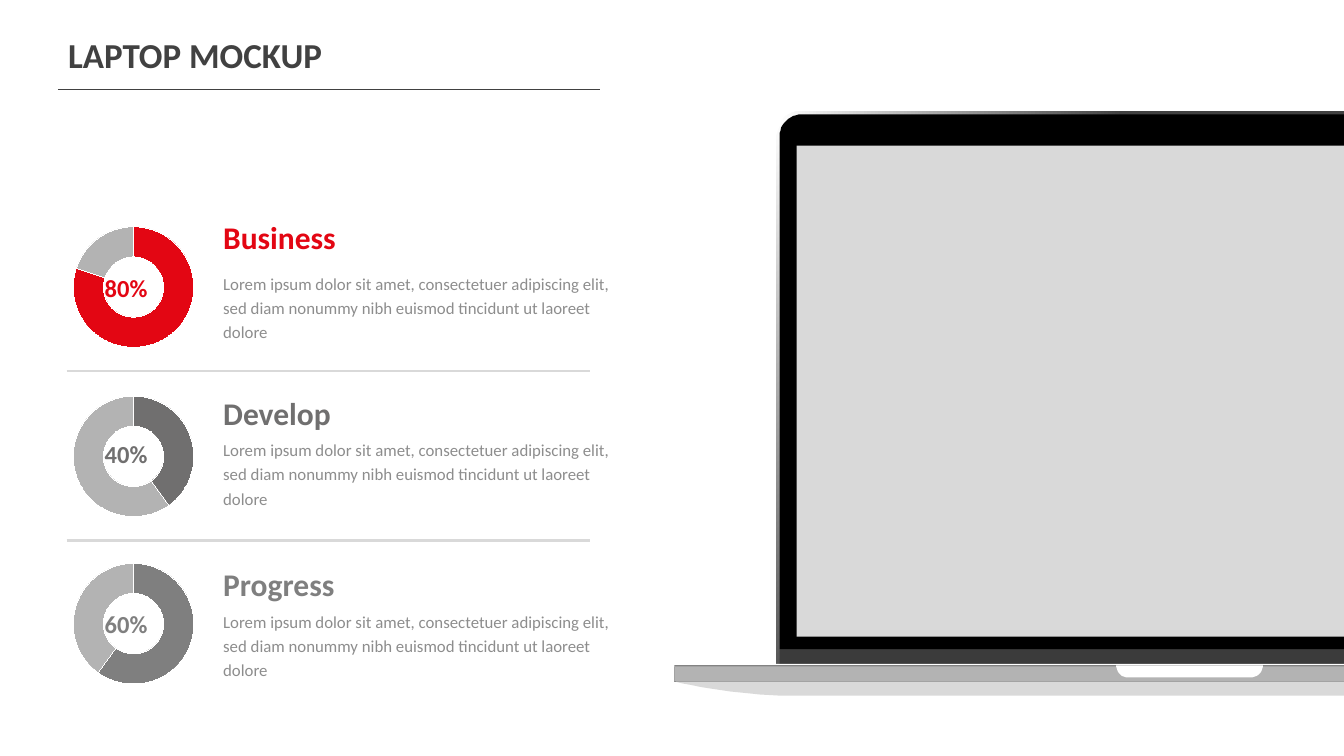
from lxml import etree
from pptx import Presentation
from pptx.chart.data import CategoryChartData
from pptx.dml.color import RGBColor
from pptx.enum.chart import XL_CHART_TYPE
from pptx.enum.shapes import MSO_CONNECTOR, MSO_SHAPE
from pptx.enum.text import MSO_ANCHOR, MSO_AUTO_SIZE, PP_ALIGN
from pptx.oxml import parse_xml
from pptx.oxml.ns import nsdecls, qn
from pptx.util import Pt

DOUGHNUT = XL_CHART_TYPE.DOUGHNUT
STRAIGHT = MSO_CONNECTOR.STRAIGHT
RECT = MSO_SHAPE.RECTANGLE
LEFT = PP_ALIGN.LEFT
TOP = MSO_ANCHOR.TOP
NO_FIT = MSO_AUTO_SIZE.NONE

PX = 9144  # 100 px to the inch
WIDTH, HEIGHT = 2667, 1500
FONT = "Calibri"
RED, DARK, MID, GRAY = "E30613", "414141", "706F6F", "7F7F7F"
SILVER, LIGHT, WHITE, BLACK = "B3B3B3", "D9D9D9", "FFFFFF", "000000"
BODY_COLOR = "8D8D8D"
LOREM = ("Lorem ipsum dolor sit amet, consectetuer adipiscing elit, "
         "sed diam nonummy nibh euismod tincidunt ut laoreet dolore")

# heading, percent, colour, then tops of chart, heading, body and percent
ROWS = [
    ("Business", 80, RED, 435, 428, 530, 536),
    ("Develop", 40, MID, 771, 777, 860, 867),
    ("Progress", 60, GRAY, 1103, 1116, 1200, 1203),
]


def px(*values):
    return [v * PX for v in values]


def rgb(color):
    return RGBColor.from_string(color)


def write(sp, text, size, color, bold=False, spacing=None):
    tf = sp.text_frame
    tf.word_wrap = True
    tf.auto_size = NO_FIT
    tf.vertical_anchor = TOP
    p = tf.paragraphs[0]
    p.alignment = LEFT
    if spacing:
        p.line_spacing = spacing
    r = p.add_run()
    r.text = text
    r.font.name = FONT
    r.font.size = Pt(size)
    r.font.bold = bold
    r.font.color.rgb = rgb(color)


def add_title(slide, text):
    sp = slide.shapes.title
    sp.left, sp.top, sp.width, sp.height = px(125, 45, 1276, 100)
    write(sp, text, 50, DARK, bold=True, spacing=1.2)


def add_text(slide, box, text, size, color, **style):
    write(slide.shapes.add_textbox(*px(*box)), text, size, color, **style)


def add_rule(slide, x1, x2, y, color, weight):
    line = slide.shapes.add_connector(STRAIGHT, *px(x1, y, x2, y))
    line.line.color.rgb = rgb(color)
    line.line.width = Pt(weight)
    etree.SubElement(line._element.spPr, qn("a:effectLst"))


def add_doughnut(slide, box, percent, color):
    data = CategoryChartData()
    data.categories = ["1", "2"]
    data.add_series("Series 1", (percent, 100 - percent))
    chart = slide.shapes.add_chart(DOUGHNUT, *px(*box), data).chart
    chart.has_legend = False
    chart.has_title = False
    chart.font.name = FONT
    chart.font.size = Pt(10)
    chart.font.color.rgb = rgb(MID)
    plot = chart.plots[0]
    plot.vary_by_categories = True
    for i, fill in enumerate((color, SILVER)):
        fmt = plot.series[0].points[i].format
        fmt.fill.solid()
        fmt.fill.fore_color.rgb = rgb(fill)
        fmt.line.color.rgb = rgb(WHITE)
    plot._element.find(qn("c:holeSize")).set("val", "70")
    area = chart._chartSpace.chart.plotArea
    for old in area.findall(qn("c:layout")):
        area.remove(old)
    area.insert(0, parse_xml(
        f'<c:layout {nsdecls("c")}><c:manualLayout><c:layoutTarget val="inner"/>'
        '<c:xMode val="edge"/><c:yMode val="edge"/><c:x val="0.05"/><c:y val="0.05"/>'
        '<c:w val="0.9"/><c:h val="0.9"/></c:manualLayout></c:layout>'))


def paint(sp, color):
    sp.shadow.inherit = False
    sp.line.fill.background()
    sp.fill.solid()
    sp.fill.fore_color.rgb = rgb(color)


def paint_metal(sp, angle):
    """Shade from white to dark, with the angle counted clockwise."""
    paint(sp, WHITE)
    sp.fill.gradient()
    sp.fill.gradient_angle = -angle % 360
    for stop, place, color in zip(sp.fill.gradient_stops, (0, 0.61), (WHITE, DARK)):
        stop.position = place
        stop.color.rgb = rgb(color)


def corner(start, tip, end, steps=12):
    """Points of a rounded corner from start to end, bulging towards tip."""
    c1, c2 = ([a + 0.55 * (t - a) for a, t in zip(p, tip)] for p in (start, end))
    points = []
    for i in range(steps + 1):
        t = i / steps
        u = 1 - t
        points.append(tuple(
            u**3 * a + 3 * u * u * t * b + 3 * u * t * t * c + t**3 * d
            for a, b, c, d in zip(start, c1, c2, end)))
    return points


def add_outline(shapes, points):
    builder = shapes.build_freeform(*points[0], scale=PX)
    builder.add_line_segments(points[1:], close=True)
    return builder.convert_to_shape()


def add_rect(shapes, box, color):
    paint(shapes.add_shape(RECT, *px(*box)), color)


def add_laptop(slide):
    shapes = slide.shapes.add_group_shape().shapes
    edge, lid_left, rim_left, base_left = WIDTH, 1547, 1540, 1338
    lid_corner = corner((lid_left, 270), (lid_left, 227), (1591, 227))
    rim_corner = corner((rim_left, 276), (rim_left, 227), (1591, 227))
    top_corner = corner((rim_left, 269), (rim_left, 220), (1591, 220))

    side_rim = add_outline(shapes, [
        (rim_left, 1317), *rim_corner, (edge, 227), *lid_corner[::-1], (lid_left, 1317)])
    paint_metal(side_rim, 50)
    top_rim = add_outline(shapes, [
        *top_corner, (edge, 220), (edge, 227), *rim_corner[::-1]])
    paint_metal(top_rim, 0)

    add_rect(shapes, (lid_left, 1288, edge - lid_left, 29), "3B3B3B")
    lid = add_outline(shapes, [
        (lid_left, 1288), *lid_corner, (edge, 227), (edge, 1288)])
    paint(lid, BLACK)
    add_rect(shapes, (rim_left, 1317, edge - rim_left, 3), WHITE)

    for top, height, color in ((1320, 1, DARK), (1322, 31, DARK), (1322, 29, SILVER)):
        add_rect(shapes, (base_left, top, edge - base_left, height), color)
    notch = add_outline(shapes, [
        (2215, 1320),
        *corner((2215, 1320), (2215, 1344), (2238, 1344)),
        *corner((2482, 1344), (2506, 1344), (2506, 1320))])
    paint(notch, WHITE)
    underside = add_outline(shapes, [
        (edge, 1352), (edge, 1380),
        *corner((1560, 1380), (1448, 1380), (base_left, 1352))])
    paint(underside, LIGHT)
    add_rect(shapes, (1581, 289, edge - 1581, 974), LIGHT)


def main():
    prs = Presentation()
    prs.slide_width, prs.slide_height = px(WIDTH, HEIGHT)
    slide = prs.slides.add_slide(prs.slide_layouts[5])

    add_title(slide, "LAPTOP MOCKUP")
    add_rule(slide, 115, 1190, 177, DARK, 0.5)
    for heading, percent, color, chart_y, heading_y, body_y, percent_y in ROWS:
        add_doughnut(slide, (132, chart_y, 266, 269), percent, color)
        add_text(slide, (198, percent_y, 139, 69), f"{percent}%", 35, color, bold=True)
        add_text(slide, (433, heading_y, 799, 86), heading, 45, color, bold=True)
        add_text(slide, (433, body_y, 799, 156), LOREM, 24, BODY_COLOR, spacing=1.2)
    for y in (736, 1072):
        add_rule(slide, 132, 1170, y, LIGHT, 4)
    add_laptop(slide)

    prs.save("out.pptx")


if __name__ == "__main__":
    main()
